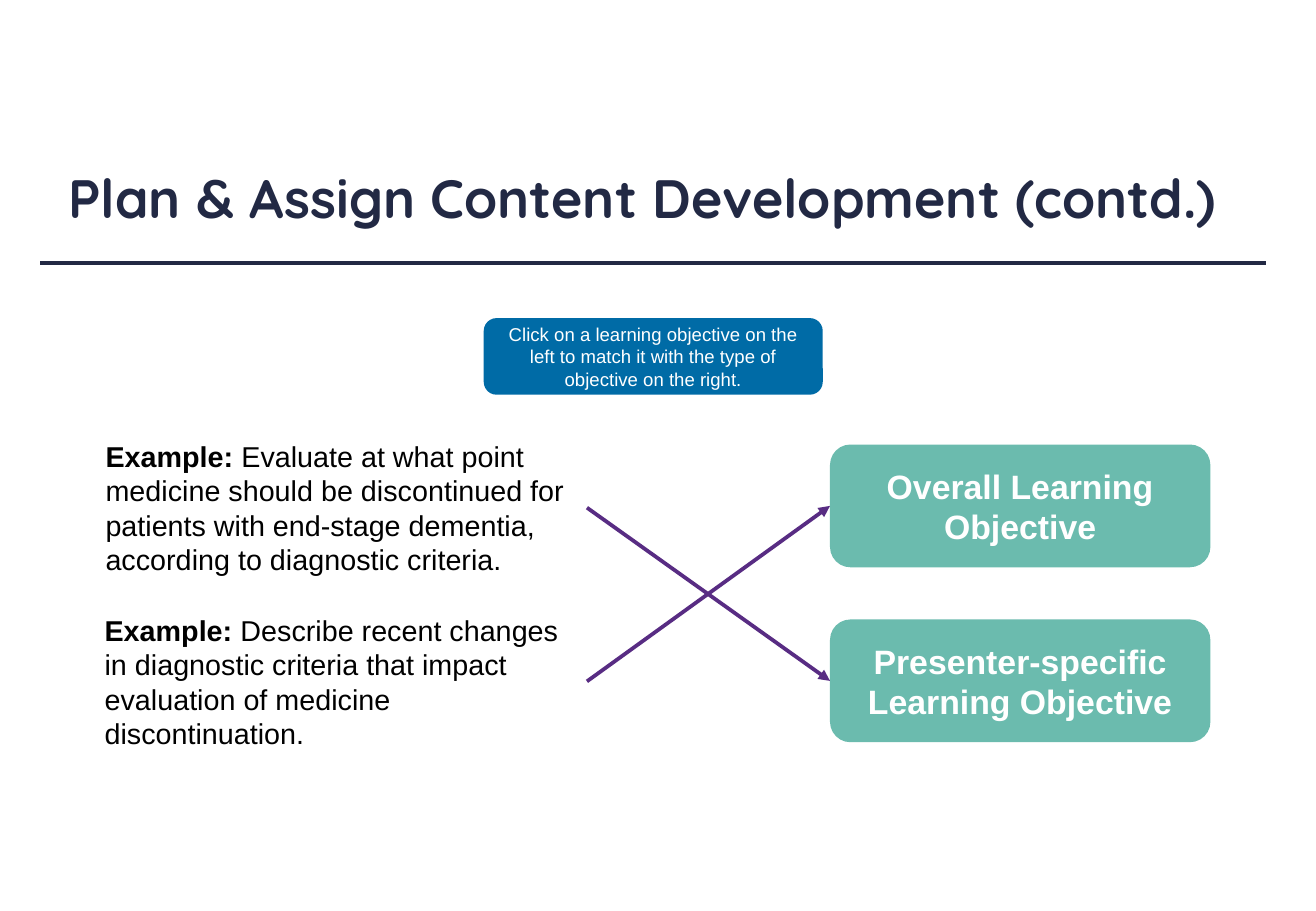
"""Build the slide that matches learning objectives with their types."""
from lxml import etree
from pptx import Presentation
from pptx import util as u
from pptx.dml.color import RGBColor
from pptx.enum import shapes, text
from pptx.oxml.ns import qn

NAVY, TEAL, BLUE, PURPLE = "222944", "6BBBAE", "006BA6", "582C83"
TITLE = "Plan & Assign Content Development (contd.)"
PROMPT = ("Click on a learning objective on the left to match it "
          "with the type of objective on the right.")
EXAMPLES = [
    ("Evaluate at what point medicine should be discontinued for patients "
     "with end-stage dementia, according to diagnostic criteria.", 256.3, 89.3),
    ("Describe recent changes in diagnostic criteria that impact evaluation "
     "of medicine discontinuation.", 365, 77.8),
]
TYPES = ["Overall Learning Objective", "Presenter-specific Learning Objective"]
MATCHES = [(0, 1), (1, 0)]
TYPE_TOP, TYPE_HEIGHT, TYPE_PITCH = 263.5, 72.8, 103.7


def color(value):
    return RGBColor.from_string(value)


def write(box, spans, size, ink, font="Arial", align=text.PP_ALIGN.LEFT,
          anchor=text.MSO_ANCHOR.MIDDLE):
    frame = box.text_frame
    frame.word_wrap = True
    frame.vertical_anchor = anchor
    para = frame.paragraphs[0]
    para.alignment = align
    for words, bold in spans:
        span = para.add_run()
        span.text = words
        span.font.name, span.font.size, span.font.bold = font, u.Pt(size), bold
        span.font.color.rgb = color(ink)


def add_box(page, left, top, width, height, fill=None):
    box = page.shapes.add_shape(shapes.MSO_SHAPE.ROUNDED_RECTANGLE,
                                u.Pt(left), u.Pt(top), u.Pt(width), u.Pt(height))
    box.shadow.inherit = False
    box.line.fill.background()
    if fill:
        box.fill.solid()
        box.fill.fore_color.rgb = color(fill)
    else:
        box.fill.background()
    return box


def add_line(page, ink, start=(0, 0), end=(0, 0)):
    line = page.shapes.add_connector(shapes.MSO_CONNECTOR.STRAIGHT,
                                     *map(u.Pt, start + end))
    line.line.color.rgb = color(ink)
    line.line.width = u.Pt(2.25)
    etree.SubElement(line._element.spPr, qn("a:effectLst"))
    return line


def main():
    deck = Presentation()
    deck.slide_width, deck.slide_height = u.Pt(779.76), u.Pt(540)
    page = deck.slides.add_slide(deck.slide_layouts[6])
    center = text.PP_ALIGN.CENTER

    add_line(page, NAVY, (24, 156), (750, 156))
    title = page.shapes.add_textbox(u.Pt(38.9), u.Pt(96.5), u.Pt(702), u.Pt(61.2))
    frame = title.text_frame
    frame.margin_left = frame.margin_right = u.Pt(1.5)
    frame.margin_top = frame.margin_bottom = u.Pt(0.75)
    write(title, [(TITLE, True)], 32, NAVY, font="Quicksand",
          anchor=text.MSO_ANCHOR.TOP)

    type_boxes = []
    for row, label in enumerate(TYPES):
        box = add_box(page, 491.8, TYPE_TOP + row * TYPE_PITCH, 225.4,
                      TYPE_HEIGHT, TEAL)
        write(box, [(label, True)], 20, "FFFFFF", align=center)
        type_boxes.append(box)

    example_boxes = []
    for words, top, height in EXAMPLES:
        box = add_box(page, 51.1, top, 296.7, height)
        write(box, [("Example: ", True), (words, False)], 17, "000000")
        example_boxes.append(box)

    for example, kind in MATCHES:
        arrow = add_line(page, PURPLE)
        arrow.begin_connect(example_boxes[example], 3)
        arrow.end_connect(type_boxes[kind], 1)
        etree.SubElement(arrow.line._get_or_add_ln(), qn("a:tailEnd"),
                         type="triangle")

    prompt = add_box(page, 286.6, 188.6, 200.9, 45.4, BLUE)
    write(prompt, [(PROMPT, False)], 11, "FFFFFF", align=center)
    deck.save("out.pptx")


if __name__ == "__main__":
    main()
